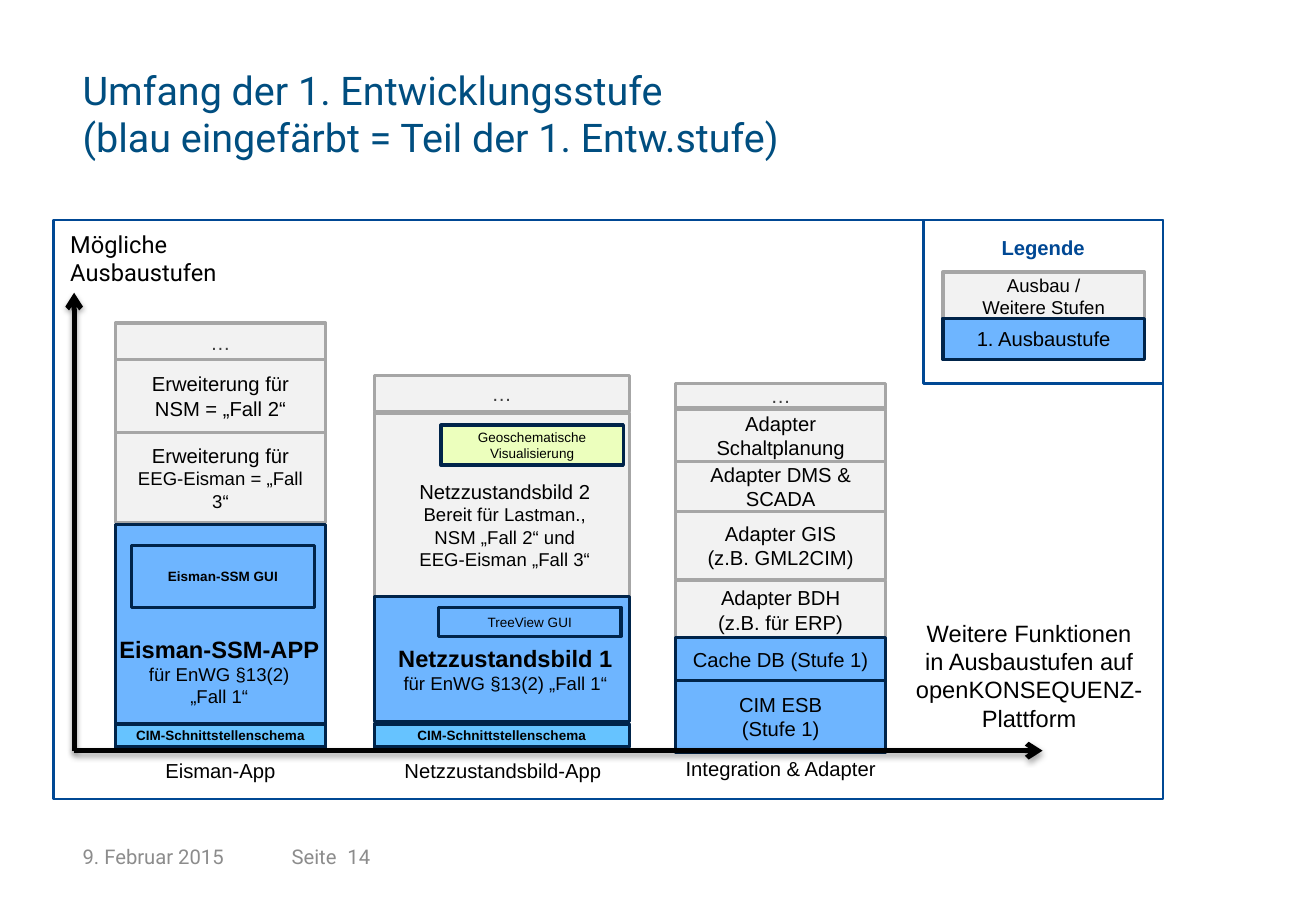
from pptx import Presentation
from pptx.dml.color import RGBColor
from pptx.enum.shapes import MSO_CONNECTOR, MSO_SHAPE
from pptx.enum.text import MSO_ANCHOR, PP_ALIGN
from pptx.oxml import parse_xml
from pptx.oxml.ns import nsdecls
from pptx.util import Inches, Pt

FUTURE = ("F2F2F2", "A6A6A6", 2)
STAGE_ONE = ("6EB5FF", "00244A", 2)
SCHEMA = ("66C3FF", "00244A", 2)
GEO = ("ECFFBD", "00244A", 2)
FRAME = (None, "004894", 1.5)

presentation = Presentation()
presentation.slide_width, presentation.slide_height = Inches(10.83), Inches(7.5)
slide = presentation.slides.add_slide(presentation.slide_layouts[6])


def add_text(shape, lines, color="000000", font="Arial", align=PP_ALIGN.CENTER,
             anchor=MSO_ANCHOR.MIDDLE, margins=True):
    """Fill a shape with (text, size, bold) paragraphs."""
    frame = shape.text_frame
    frame.word_wrap = True
    frame.vertical_anchor = anchor
    if not margins:
        frame.margin_left = frame.margin_right = 0
        frame.margin_top = frame.margin_bottom = 0
    for index, (text, size, bold) in enumerate(lines):
        paragraph = frame.paragraphs[0] if index == 0 else frame.add_paragraph()
        paragraph.text = text
        paragraph.alignment = align
        paragraph.font.name = font
        paragraph.font.size = Pt(size)
        paragraph.font.bold = bold
        paragraph.font.color.rgb = RGBColor.from_string(color)


def add_box(left, top, width, height, style, lines=(), color="000000"):
    """Draw a rectangle in a (fill, line, line width) style."""
    fill, line, line_width = style
    shape = slide.shapes.add_shape(MSO_SHAPE.RECTANGLE, Inches(left), Inches(top),
                                   Inches(width), Inches(height))
    shape.shadow.inherit = False
    if fill:
        shape.fill.solid()
        shape.fill.fore_color.rgb = RGBColor.from_string(fill)
    else:
        shape.fill.background()
    shape.line.color.rgb = RGBColor.from_string(line)
    shape.line.width = Pt(line_width)
    add_text(shape, lines, color)


# Title and footer
heading = "Umfang der 1. Entwicklungsstufe\v(blau eingefärbt = Teil der 1. Entw.stufe)"
for left, top, width, height, text, size, color, align, anchor in [
    (0.68, 0.52, 9.6, 0.8, heading, 23.4, "004E80", PP_ALIGN.LEFT, MSO_ANCHOR.BOTTOM),
    (0.68, 6.95, 1.41, 0.4, "9. Februar 2015", 12, "8C8C8C", PP_ALIGN.LEFT, MSO_ANCHOR.TOP),
    (2.09, 6.95, 0.68, 0.4, "Seite", 12, "8C8C8C", PP_ALIGN.RIGHT, MSO_ANCHOR.TOP),
    (2.86, 6.95, 2.53, 0.4, "14", 12, "8C8C8C", PP_ALIGN.LEFT, MSO_ANCHOR.TOP),
]:
    shape = slide.shapes.add_textbox(Inches(left), Inches(top), Inches(width), Inches(height))
    add_text(shape, [(text, size, False)], color, "Roboto", align, anchor, margins=False)

# Stacks of stages: left, width, then (top, height, style, paragraphs) from top to bottom
dots = [("…", 12, False)]
schema = [("CIM-Schnittstellenschema", 8, True)]
stacks = [
    (0.95, 1.73, [
        (2.66, 0.31, FUTURE, dots),
        (2.96, 0.6, FUTURE, [("Erweiterung für", 12, False), ("NSM = „Fall 2“", 12, False)]),
        (3.56, 0.74, FUTURE, [("Erweiterung für", 12, False),
                              ("EEG-Eisman = „Fall 3“", 11, False)]),
        (4.32, 1.64, STAGE_ONE, []),
        (5.96, 0.19, SCHEMA, schema),
    ]),
    (3.08, 2.1, [
        (3.09, 0.3, FUTURE, dots),
        (3.4, 1.51, FUTURE, []),
        (4.91, 1.03, STAGE_ONE, []),
        (5.96, 0.19, SCHEMA, schema),
    ]),
    (5.56, 1.73, [
        (3.16, 0.2, FUTURE, dots),
        (3.37, 0.43, FUTURE, [("Adapter", 12, False), ("Schaltplanung", 12, False)]),
        (3.8, 0.41, FUTURE, [("Adapter DMS & SCADA", 12, False)]),
        (4.21, 0.56, FUTURE, [("Adapter GIS\v(z.B. GML2CIM)", 12, False)]),
        (4.78, 0.48, FUTURE, [("Adapter BDH\v(z.B. für ERP)", 12, False)]),
        (5.25, 0.36, STAGE_ONE, [("Cache DB (Stufe 1)", 12, False)]),
        (5.6, 0.59, STAGE_ONE, [("CIM ESB\v(Stufe 1)", 12, False)]),
    ]),
]
for left, width, stages in stacks:
    for top, height, style, lines in stages:
        add_box(left, top, width, height, style, lines, "404040" if lines is dots else "000000")

# User interfaces inside the stages
add_box(1.08, 4.49, 1.51, 0.51, STAGE_ONE, [("Eisman-SSM GUI", 8, True)])
add_box(3.63, 3.5, 1.5, 0.33, GEO, [("Geoschematische\vVisualisierung", 8, False)])
add_box(3.61, 5, 1.5, 0.24, STAGE_ONE, [("TreeView GUI", 8, False)])

# Frame and legend
add_box(0.44, 1.81, 9.13, 4.77, FRAME)
add_box(7.6, 1.81, 1.97, 1.35, FRAME)
add_box(7.76, 2.24, 1.66, 0.39, FUTURE, [("Ausbau /\vWeitere Stufen", 11, False)])
add_box(7.76, 2.62, 1.66, 0.34, STAGE_ONE, [("1. Ausbaustufe", 12, False)])

# Stage descriptions, stack names and legend heading
for left, top, width, height, lines, color in [
    (0.82, 5.17, 1.97, 0.71, [("Eisman-SSM-APP", 14, True), ("für EnWG §13(2)", 11, False),
                              ("„Fall 1“", 11, False)], "000000"),
    (3.1, 5.25, 2.12, 0.52, [("Netzzustandsbild 1", 14, True),
                             ("für EnWG §13(2) „Fall 1“", 11, False)], "000000"),
    (3.34, 3.89, 1.63, 0.86, [("Netzzustandsbild 2", 12, False),
                              ("Bereit für Lastman., NSM „Fall 2“ und EEG-Eisman „Fall 3“",
                               11, False)], "000000"),
    (0.95, 6.19, 1.73, 0.31, [("Eisman-App", 12, False)], "000000"),
    (2.96, 6.19, 2.36, 0.31, [("Netzzustandsbild-App", 12, False)], "000000"),
    (5.25, 6.18, 2.35, 0.3, [("Integration & Adapter", 12, False)], "000000"),
    (8.04, 1.89, 1.09, 0.3, [("Legende", 12, True)], "004894"),
]:
    shape = slide.shapes.add_textbox(Inches(left), Inches(top), Inches(width), Inches(height))
    add_text(shape, lines, color)

# Axes with arrowheads and soft shadow
for end_x, end_y in [(0.61, 2.41), (8.58, 6.18)]:
    axis = slide.shapes.add_connector(MSO_CONNECTOR.STRAIGHT, Inches(0.61), Inches(6.18),
                                      Inches(end_x), Inches(end_y))
    axis.line.color.rgb = RGBColor.from_string("000000")
    axis.line.width = Pt(3)
    axis.line._get_or_add_ln().append(parse_xml(f'<a:tailEnd {nsdecls("a")} type="arrow"/>'))
    axis._element.spPr.append(parse_xml(
        f'<a:effectLst {nsdecls("a")}><a:outerShdw blurRad="40000" dist="23000" dir="5400000" '
        'rotWithShape="0"><a:srgbClr val="000000"><a:alpha val="35000"/></a:srgbClr>'
        '</a:outerShdw></a:effectLst>'))

# Axis labels
vertical_label = slide.shapes.add_textbox(Inches(0.48), Inches(1.84), Inches(1.84), Inches(0.57))
add_text(vertical_label, [("Mögliche\vAusbaustufen", 14, False)], font="Roboto",
         align=PP_ALIGN.LEFT)
horizontal_label = slide.shapes.add_textbox(Inches(7.37), Inches(4.93), Inches(2.2), Inches(1.26))
add_text(horizontal_label, [(text, 14, False) for text in (
    "Weitere Funktionen", "in Ausbaustufen auf", "openKONSEQUENZ-", "Plattform")])

presentation.save("out.pptx")
